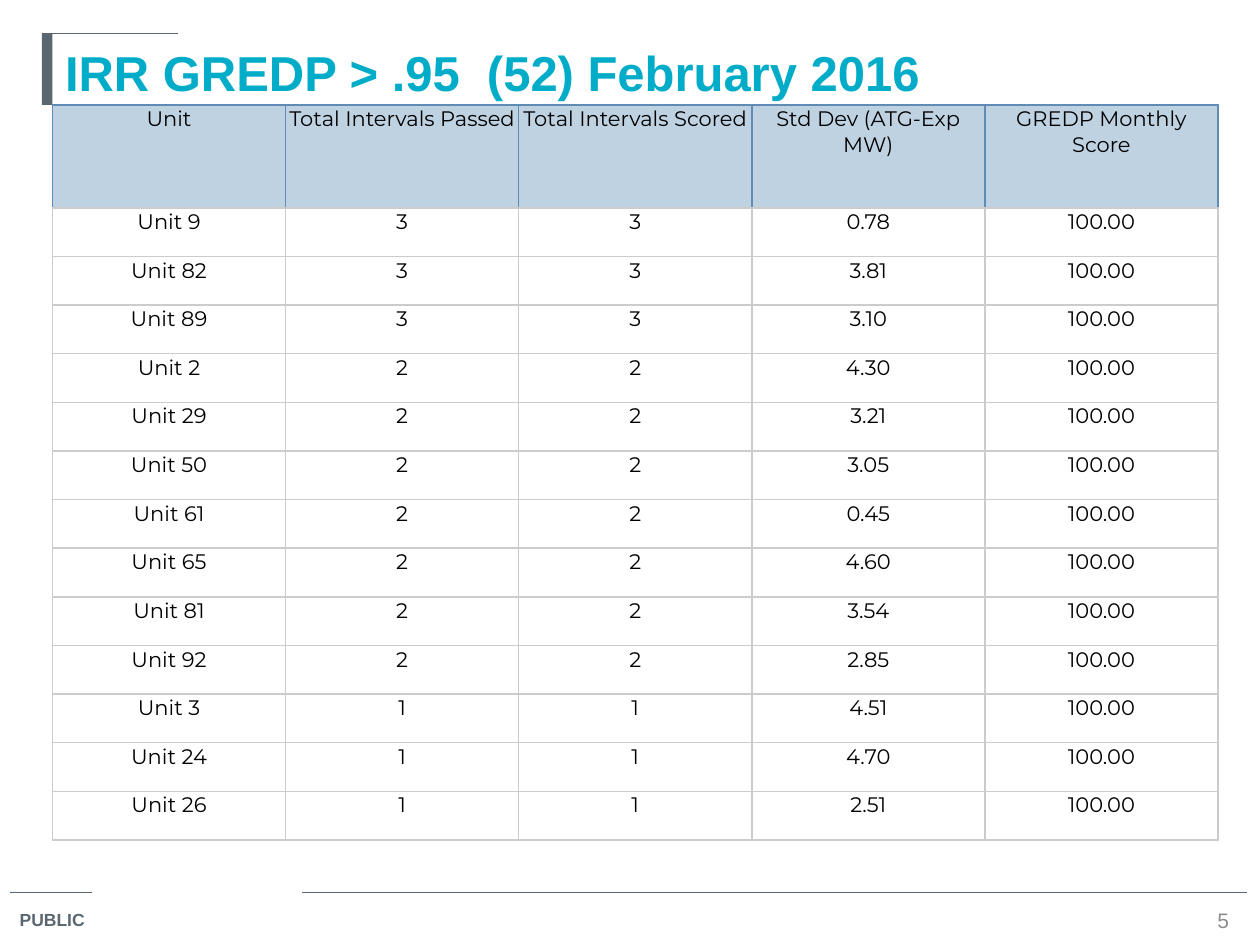
from typing import NamedTuple

import pptx
import pptx.chart
import pptx.dml.color
import pptx.enum.shapes
import pptx.enum.text
import pptx.oxml
import pptx.oxml.ns
import pptx.util

# The slide is a grid of 120 columns by 90 rows
COLS, ROWS = 120, 90
SLATE, TEAL, GREY = "5B6770", "00ACC8", "8C8C8C"
PALE, BLUE, EDGE, BLACK = "BFD2E2", "608BB4", "CCCCCC", "000000"
ALIGN = pptx.enum.text.PP_ALIGN
ANCHOR = pptx.enum.text.MSO_ANCHOR


class Box(NamedTuple):
    left: float
    top: float
    width: float
    height: float


class Rule(NamedTuple):
    left: float
    right: float
    row: float


class Unit(NamedTuple):
    name: str
    passed: int
    scored: int
    dev: str
    score: str = "100.00"


RULES = [Rule(4, 17, 3.2), Rule(1, 8.8, 85), Rule(28.8, 118.8, 85)]
HEADS = ["Unit", "Total Intervals Passed", "Total Intervals Scored",
         "Std Dev (ATG-Exp MW)", "GREDP Monthly Score"]
UNITS = [
    Unit("Unit 9", 3, 3, "0.78"),
    Unit("Unit 82", 3, 3, "3.81"),
    Unit("Unit 89", 3, 3, "3.10"),
    Unit("Unit 2", 2, 2, "4.30"),
    Unit("Unit 29", 2, 2, "3.21"),
    Unit("Unit 50", 2, 2, "3.05"),
    Unit("Unit 61", 2, 2, "0.45"),
    Unit("Unit 65", 2, 2, "4.60"),
    Unit("Unit 81", 2, 2, "3.54"),
    Unit("Unit 92", 2, 2, "2.85"),
    Unit("Unit 3", 1, 1, "4.51"),
    Unit("Unit 24", 1, 1, "4.70"),
    Unit("Unit 26", 1, 1, "2.51"),
]
GRID = Box(5, 10, 111, 70)
HEAD = 9.8

deck = pptx.Presentation()
deck.slide_width = pptx.util.Inches(10)
deck.slide_height = pptx.util.Inches(7.5)
slide = deck.slides.add_slide(deck.slide_layouts[5])


def across(cols: float) -> int:
    return round(deck.slide_width * cols / COLS)


def down(rows: float) -> int:
    return round(deck.slide_height * rows / ROWS)


def place(box: Box) -> tuple:
    return across(box.left), down(box.top), across(box.width), down(box.height)


def color(code: str) -> pptx.dml.color.RGBColor:
    return pptx.dml.color.RGBColor.from_string(code)


def write(frame, text: str, size: float = 12, face: str = "Arial",
          ink: str = BLACK, bold: bool = False, align=ALIGN.LEFT) -> None:
    para = frame.paragraphs[0]
    para.alignment = align
    run = para.add_run()
    run.text = text
    run.font.size = pptx.util.Pt(size)
    run.font.name = face
    run.font.bold = bold
    run.font.color.rgb = color(ink)


def label(box: Box, text: str, inset: float = 0.1, anchor=ANCHOR.TOP,
          **form) -> None:
    frame = slide.shapes.add_textbox(*place(box)).text_frame
    frame.word_wrap = True
    frame.vertical_anchor = anchor
    frame.margin_left = frame.margin_right = pptx.util.Inches(inset)
    frame.margin_top = frame.margin_bottom = pptx.util.Inches(inset / 2)
    write(frame, text, **form)


def draw(rule: Rule) -> None:
    line = slide.shapes.add_connector(
        pptx.enum.shapes.MSO_CONNECTOR.STRAIGHT, across(rule.left),
        down(rule.row), across(rule.right), down(rule.row))
    line.line.color.rgb = color(SLATE)
    line.line.width = pptx.util.Pt(0.75)
    line._element.spPr.append(pptx.oxml.parse_xml(
        f"<a:effectLst {pptx.oxml.ns.nsdecls('a')}/>"))


def border(cell, side: str, code: str) -> None:
    cell._tc.get_or_add_tcPr().append(pptx.oxml.parse_xml(
        f'<a:ln{side} {pptx.oxml.ns.nsdecls("a")} w="{pptx.util.Pt(1)}">'
        f'<a:solidFill><a:srgbClr val="{code}"/></a:solidFill></a:ln{side}>'))


def fill_cell(cell, text: str, head: bool) -> None:
    cell.margin_left = cell.margin_right = pptx.util.Inches(0.01)
    cell.margin_top, cell.margin_bottom = pptx.util.Inches(0.01), 0
    for side in "LRTB":
        border(cell, side, BLUE if head and side != "B" else EDGE)
    if head:
        cell.fill.solid()
        cell.fill.fore_color.rgb = color(PALE)
    else:
        cell.fill.background()
    write(cell.text_frame, text, face="Montserrat", align=ALIGN.CENTER)


# Accent bar and rules
bar = slide.shapes.add_shape(pptx.enum.shapes.MSO_SHAPE.RECTANGLE,
                             *place(Box(4, 3.2, 1, 6.8)))
bar.shadow.inherit = False
bar.fill.solid()
bar.fill.fore_color.rgb = color(SLATE)
bar.line.fill.background()
for rule in RULES:
    draw(rule)

# Title
title = slide.shapes.title
title.left, title.top, title.width, title.height = place(Box(5, 3.2, 111, 8.8))
title.text_frame.vertical_anchor = ANCHOR.TOP
title.text_frame.margin_top = pptx.util.Inches(0.07)
title.text_frame.auto_size = pptx.enum.text.MSO_AUTO_SIZE.NONE
write(title.text_frame, "IRR GREDP > .95  (52) February 2016",
      size=28, ink=TEAL, bold=True)

# Score table
rows = [HEADS] + [[str(part) for part in unit] for unit in UNITS]
table = slide.shapes.add_table(len(rows), len(HEADS), *place(GRID)).table
table.first_row = table.horz_banding = False
for col in table.columns:
    col.width = across(GRID.width / len(HEADS))
for r, texts in enumerate(rows):
    table.rows[r].height = down(
        (GRID.height - HEAD) / len(UNITS) if r else HEAD)
    for c, text in enumerate(texts):
        fill_cell(table.cell(r, c), text, head=r == 0)

# Footer
label(Box(0.7, 86, 9.2, 3.4), "PUBLIC", size=10, ink=SLATE, bold=True)
label(Box(115, 86.2, 3, 2.8), "5", inset=0, anchor=ANCHOR.MIDDLE,
      ink=GREY, align=ALIGN.CENTER)

deck.save("out.pptx")
